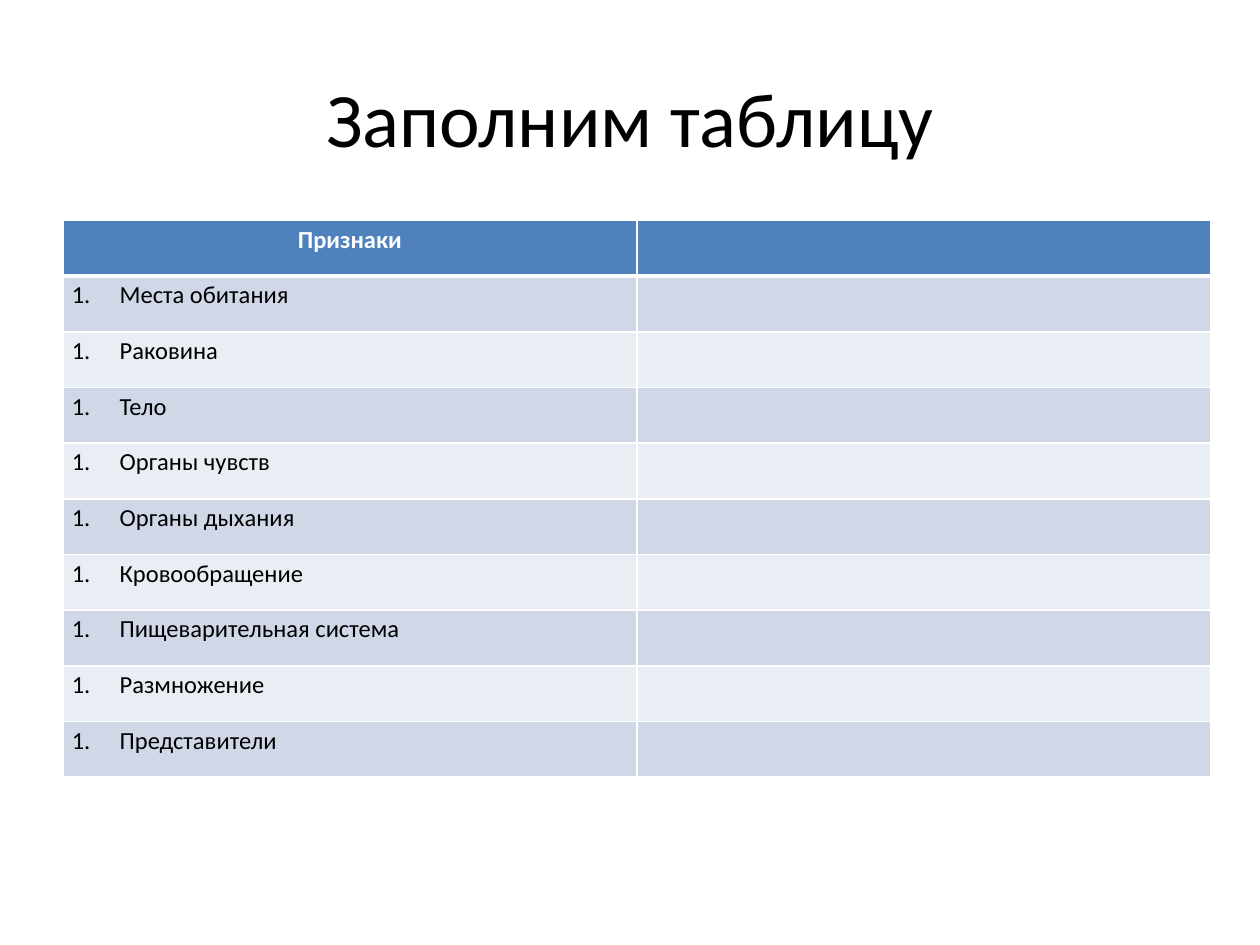
from pptx import Presentation
from pptx.dml.color import RGBColor
from pptx.enum.text import MSO_ANCHOR, PP_ALIGN
from pptx.oxml.ns import qn
from pptx.util import Inches, Pt
from lxml.etree import SubElement

FONT = "Calibri"
WHITE, BLACK = "FFFFFF", "000000"
HEADER_FILL = "4F81BD"
BAND_FILLS = ("D0D8E8", "E9EDF4")
HEADINGS = ("Признаки", "")
FEATURES = (
    "Места обитания", "Раковина", "Тело", "Органы чувств", "Органы дыхания",
    "Кровообращение", "Пищеварительная система", "Размножение", "Представители",
)


def color(hex_value):
    return RGBColor.from_string(hex_value)


def add_run(paragraph, text, size, hex_value, bold=False):
    run = paragraph.add_run()
    run.text = text
    run.font.name = FONT
    run.font.size = Pt(size)
    run.font.bold = bold
    run.font.color.rgb = color(hex_value)


def add_title(slide, text, left, top, width, height):
    title = slide.shapes.title
    title.left, title.top = Inches(left), Inches(top)
    title.width, title.height = Inches(width), Inches(height)
    frame = title.text_frame
    frame.vertical_anchor = MSO_ANCHOR.MIDDLE
    paragraph = frame.paragraphs[0]
    paragraph.alignment = PP_ALIGN.CENTER
    add_run(paragraph, text, 44, BLACK)


def style_cell(cell, fill, top_width=1, bottom_width=1):
    """Give the cell white borders (widths in points) and a solid fill."""
    properties = cell._tc.get_or_add_tcPr()
    widths = {"a:lnL": 1, "a:lnR": 1, "a:lnT": top_width, "a:lnB": bottom_width}
    for tag, width in widths.items():
        border = SubElement(properties, qn(tag), w=str(Pt(width)))
        border_fill = SubElement(border, qn("a:solidFill"))
        SubElement(border_fill, qn("a:srgbClr"), val=WHITE)
    cell.fill.solid()
    cell.fill.fore_color.rgb = color(fill)


def start_paragraph(cell):
    """Set the cell's margins and return its spaced first paragraph."""
    cell.margin_left = cell.margin_right = Inches(0.07)
    cell.margin_top = cell.margin_bottom = 0
    paragraph = cell.text_frame.paragraphs[0]
    paragraph.line_spacing = 1.15
    return paragraph


def number_paragraph(paragraph):
    properties = paragraph._p.get_or_add_pPr()
    properties.set("marL", str(Inches(0.38)))
    properties.set("indent", str(-Inches(0.38)))
    SubElement(properties, qn("a:buFont"), typeface="+mj-lt")
    SubElement(properties, qn("a:buAutoNum"), type="arabicPeriod")


def add_features_table(slide, left, top, width, height):
    table = slide.shapes.add_table(
        len(FEATURES) + 1, len(HEADINGS),
        Inches(left), Inches(top), Inches(width), Inches(height),
    ).table

    for column, heading in enumerate(HEADINGS):
        cell = table.cell(0, column)
        style_cell(cell, HEADER_FILL, bottom_width=3)
        if heading:
            paragraph = start_paragraph(cell)
            paragraph.alignment = PP_ALIGN.CENTER
            add_run(paragraph, heading, 14, WHITE, bold=True)

    for row, feature in enumerate(FEATURES, start=1):
        for column in range(len(HEADINGS)):
            style_cell(table.cell(row, column), BAND_FILLS[(row - 1) % 2],
                       top_width=3 if row == 1 else 1)
        paragraph = start_paragraph(table.cell(row, 0))
        number_paragraph(paragraph)
        add_run(paragraph, feature, 14, BLACK)


def main():
    presentation = Presentation()
    presentation.slide_width, presentation.slide_height = Inches(10), Inches(7.5)
    slide = presentation.slides.add_slide(presentation.slide_layouts[5])
    slide.background.fill.solid()
    slide.background.fill.fore_color.rgb = color(WHITE)
    add_title(slide, "Заполним таблицу", 0.5, 0.3, 9, 1.25)
    add_features_table(slide, 0.5, 1.75, 9.11, 4.42)
    presentation.save("out.pptx")


if __name__ == "__main__":
    main()
